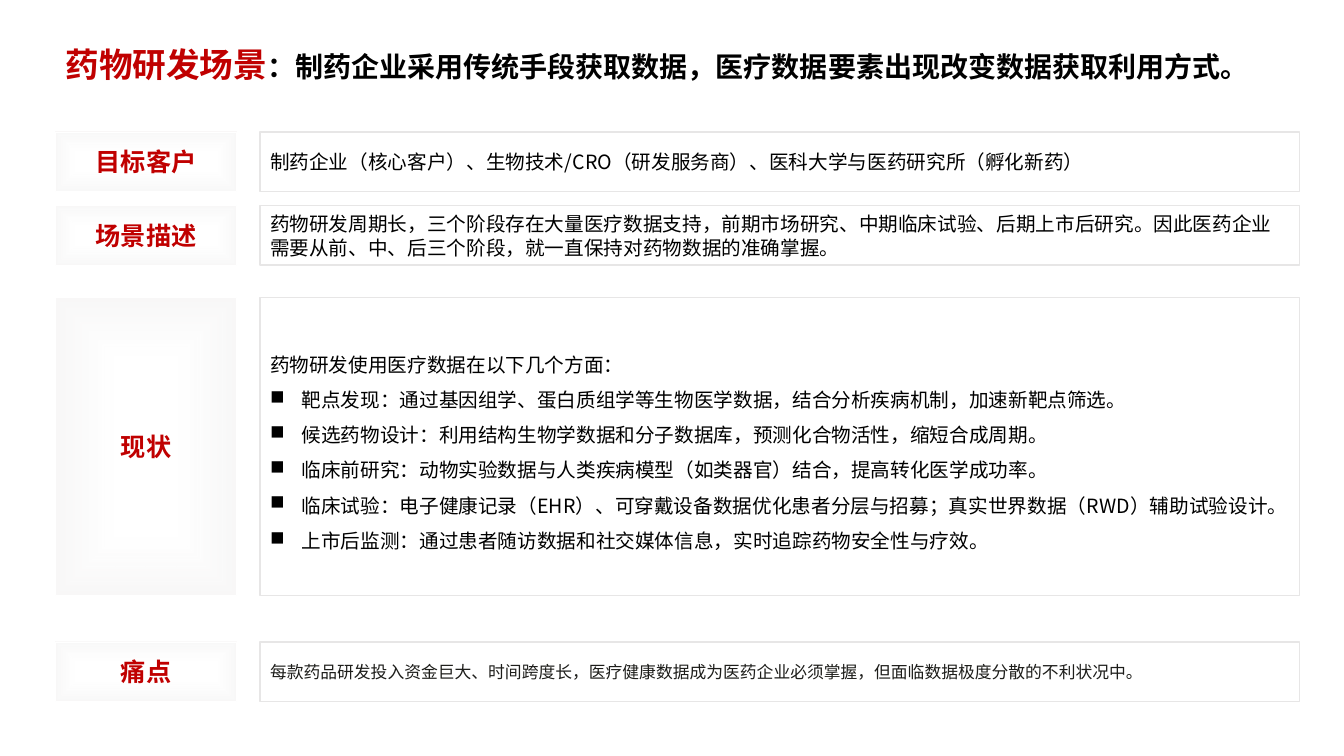
from lxml import etree
from pptx import Presentation
from pptx import util as u
from pptx.dml.color import RGBColor
from pptx.enum import lang, shapes, text
from pptx.oxml import ns

RED = RGBColor(0xC0, 0x00, 0x00)
BLACK = RGBColor(0x00, 0x00, 0x00)
CHARCOAL = RGBColor(0x1D, 0x1D, 0x1A)
WHITE = RGBColor(0xFF, 0xFF, 0xFF)
BORDER = RGBColor(0xE7, 0xE6, 0xE6)
GLOW_INNER = RGBColor(0xF1, 0xF0, 0xF0)
GLOW_OUTER = RGBColor(0xEC, 0xEB, 0xEB)

LEFT = 39.6
LABEL_WIDTH = 129.6
DETAIL_LEFT = 185.8
DETAIL_WIDTH = 742.3
SHORT = 42.5
TALL = 213.1
INDENT = 22.5

HEADLINE = [
    ("药物研发场景", 24, RED),
    ("：制药企业采用传统手段获取数据，医疗数据要素出现改变数据获取利用方式。", 20, BLACK),
]
STATUS = [
    "药物研发使用医疗数据在以下几个方面：",
    "靶点发现：通过基因组学、蛋白质组学等生物医学数据，结合分析疾病机制，加速新靶点筛选。",
    "候选药物设计：利用结构生物学数据和分子数据库，预测化合物活性，缩短合成周期。",
    "临床前研究：动物实验数据与人类疾病模型（如类器官）结合，提高转化医学成功率。",
    "临床试验：电子健康记录（EHR）、可穿戴设备数据优化患者分层与招募；真实世界数据（RWD）辅助试验设计。",
    "上市后监测：通过患者随访数据和社交媒体信息，实时追踪药物安全性与疗效。",
]
SECTIONS = [
    ("目标客户", 94.3, SHORT, 14, BLACK,
     ["制药企业（核心客户）、生物技术/CRO（研发服务商）、医科大学与医药研究所（孵化新药）"]),
    ("场景描述", 146.9, SHORT, 14, BLACK,
     ["药物研发周期长，三个阶段存在大量医疗数据支持，前期市场研究、中期临床试验、后期上市后研究。"
      "因此医药企业需要从前、中、后三个阶段，就一直保持对药物数据的准确掌握。"]),
    ("现状", 212.4, TALL, 14, BLACK, STATUS),
    ("痛点", 458.6, SHORT, 12, CHARCOAL,
     ["每款药品研发投入资金巨大、时间跨度长，医疗健康数据成为医药企业必须掌握，但面临数据极度分散的不利状况中。"]),
]


class ScenarioSlide:
    typeface = "Noto Sans CJK SC"

    def __init__(self, deck):
        self.slide = deck.slides.add_slide(deck.slide_layouts[5])

    def style(self, run, size, color, bold=False):
        run.font.size = u.Pt(size)
        run.font.bold = bold
        run.font.color.rgb = color
        run.font.name = self.typeface
        run.font.language_id = lang.MSO_LANGUAGE_ID.SIMPLIFIED_CHINESE
        east_asian = etree.Element(ns.qn("a:ea"), typeface=self.typeface)
        run.font._element.find(ns.qn("a:latin")).addnext(east_asian)

    def title(self, parts):
        headline = self.slide.shapes.title
        headline.left, headline.top = u.Pt(LEFT), u.Pt(28.1)
        headline.width, headline.height = u.Pt(888.5), u.Pt(36)
        frame = headline.text_frame
        frame.word_wrap = True
        frame.auto_size = text.MSO_AUTO_SIZE.SHAPE_TO_FIT_TEXT
        frame.vertical_anchor = text.MSO_ANCHOR.TOP
        sentence = frame.paragraphs[0]
        sentence.alignment = text.PP_ALIGN.LEFT
        for words, size, color in parts:
            run = sentence.add_run()
            run.text = words
            self.style(run, size, color, True)

    def box(self, left, top, width, height, border, weight):
        panel = self.slide.shapes.add_shape(
            shapes.MSO_SHAPE.RECTANGLE, u.Pt(left), u.Pt(top), u.Pt(width), u.Pt(height))
        panel.shadow.inherit = False
        panel.fill.solid()
        panel.fill.fore_color.rgb = WHITE
        panel.line.color.rgb = border
        panel.line.width = u.Pt(weight)
        panel.text_frame.word_wrap = True
        panel.text_frame.vertical_anchor = text.MSO_ANCHOR.MIDDLE
        return panel

    def glow(self, panel):
        gradient = etree.Element(ns.qn("a:gradFill"), rotWithShape="1")
        stops = etree.SubElement(gradient, ns.qn("a:gsLst"))
        for position, color, opacity in ((35, GLOW_INNER, 0), (95, GLOW_OUTER, 32)):
            stop = etree.SubElement(stops, ns.qn("a:gs"), pos=str(position * 1000))
            tint = etree.SubElement(stop, ns.qn("a:srgbClr"), val=str(color))
            etree.SubElement(tint, ns.qn("a:alpha"), val=str(opacity * 1000))
        spread = etree.SubElement(gradient, ns.qn("a:path"), {"path": "shape"})
        etree.SubElement(spread, ns.qn("a:fillToRect"), dict.fromkeys("ltrb", "50000"))
        properties = panel._element.spPr
        properties.replace(properties.find(ns.qn("a:solidFill")), gradient)

    def label(self, caption, top, height):
        panel = self.box(LEFT, top, LABEL_WIDTH, height, WHITE, 0.75)
        self.glow(panel)
        heading = panel.text_frame.paragraphs[0]
        heading.text = caption
        heading.alignment = text.PP_ALIGN.CENTER
        self.style(heading.runs[0], 18, RED, True)

    def bullet(self, paragraph):
        properties = paragraph._p.get_or_add_pPr()
        properties.set("marL", str(u.Pt(INDENT)))
        properties.set("indent", str(-u.Pt(INDENT)))
        etree.SubElement(properties, ns.qn("a:buChar"), char="■")

    def detail(self, lines, top, height, size, color):
        frame = self.box(DETAIL_LEFT, top, DETAIL_WIDTH, height, BORDER, 1).text_frame
        frame.text = "\n".join(lines)
        for order, paragraph in enumerate(frame.paragraphs):
            paragraph.alignment = text.PP_ALIGN.LEFT
            if len(lines) > 1:
                paragraph.line_spacing = 1.5
            if order:
                self.bullet(paragraph)
            self.style(paragraph.runs[0], size, color)


def main():
    deck = Presentation()
    deck.slide_width, deck.slide_height = u.Pt(960), u.Pt(540)
    scenario = ScenarioSlide(deck)
    scenario.title(HEADLINE)
    for caption, top, height, size, color, lines in SECTIONS:
        scenario.label(caption, top, height)
        scenario.detail(lines, top, height, size, color)
    deck.save("out.pptx")


if __name__ == "__main__":
    main()
